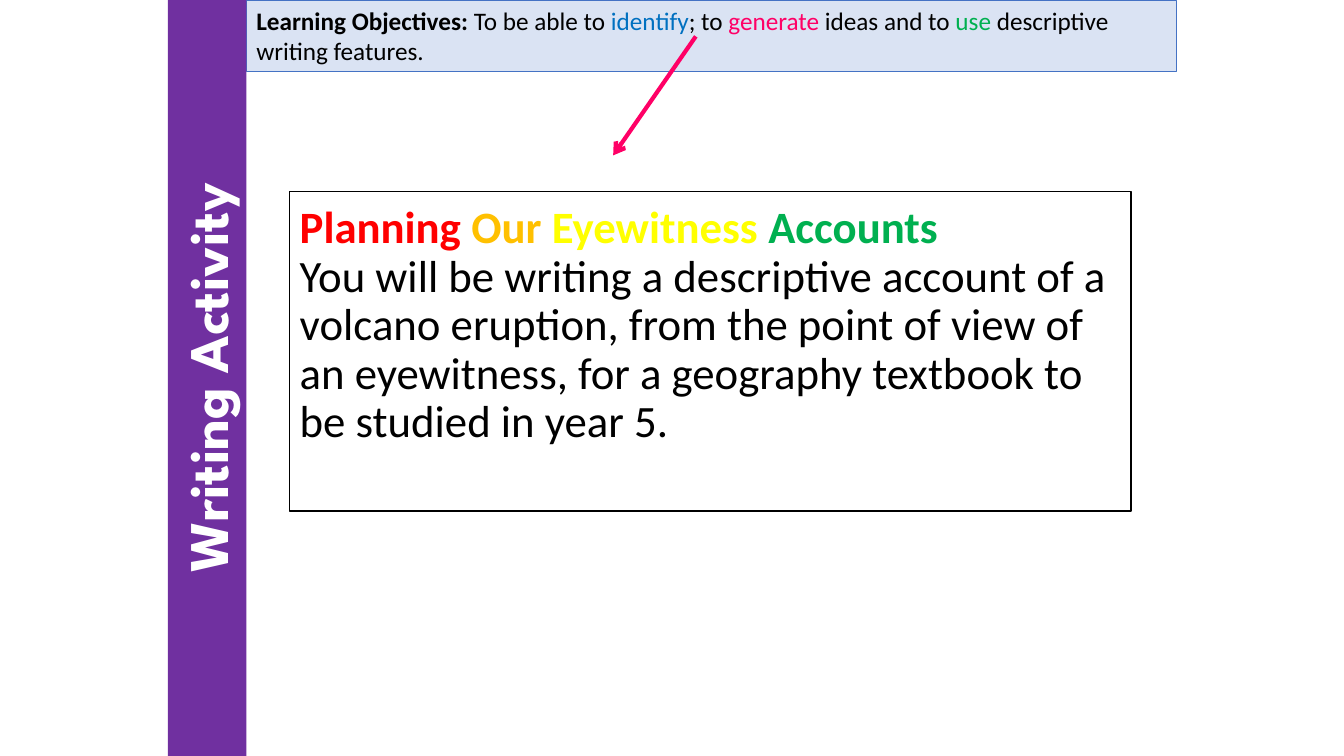
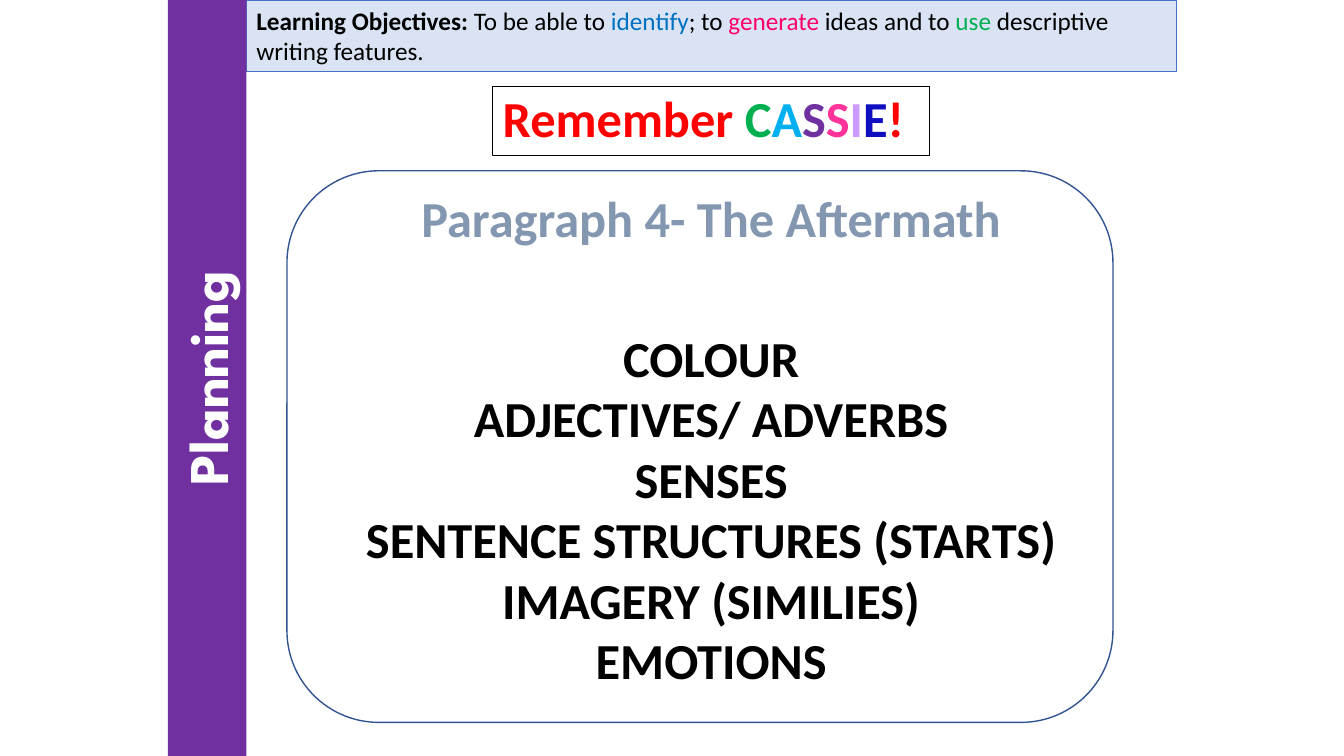
"""Build two lesson slides on planning a descriptive eyewitness account."""
from dataclasses import dataclass
from typing import NamedTuple, Optional

from lxml import etree
from pptx import Presentation
from pptx import util as u
from pptx.dml.color import RGBColor
from pptx.enum import shapes, text
from pptx.oxml import ns


@dataclass(frozen=True)
class Theme:
    body_font: str = "Calibri"
    banner_font: str = "League Spartan"
    objective_size: int = 18
    body_size: int = 32
    heading_size: int = 36
    banner_size: int = 40
    black: str = "000000"
    white: str = "FFFFFF"
    purple: str = "7030A0"
    pale_blue: str = "DAE3F3"
    objective_line: str = "4472C4"
    panel_line: str = "325491"
    slate: str = "8497B0"
    blue: str = "0070C0"
    pink: str = "FF0066"
    green: str = "00B050"
    red: str = "FF0000"
    amber: str = "FFC000"
    yellow: str = "FFFF00"
    sky: str = "00B0F0"
    rose: str = "FF3399"
    lilac: str = "CC99FF"
    navy: str = "0F0FC1"


THEME = Theme()
SLIDE_WIDTH, SLIDE_HEIGHT = 960, 540


class Box(NamedTuple):
    left: float
    top: float
    width: float
    height: float


class Span(NamedTuple):
    words: str
    color: Optional[str] = None
    bold: Optional[bool] = None


@dataclass(frozen=True)
class Line:
    spans: tuple[Span, ...]
    size: int
    color: str = THEME.black
    bold: bool = True
    font: str = THEME.body_font
    align: text.PP_ALIGN = text.PP_ALIGN.LEFT
    spacing: float = 1.0


@dataclass(frozen=True)
class Panel:
    box: Box
    lines: tuple[Line, ...] = ()
    fill: Optional[str] = None
    outline: Optional[str] = None
    outline_width: float = 1
    preset: shapes.MSO_SHAPE = shapes.MSO_SHAPE.RECTANGLE
    rotation: float = 0
    anchor: text.MSO_ANCHOR = text.MSO_ANCHOR.TOP
    top_inset: float = 3.6


OBJECTIVES = Panel(
    Box(176, 0, 664, 51),
    (Line((
        Span("Learning Objectives: ", bold=True),
        Span("To be able to "),
        Span("identify", THEME.blue),
        Span("; to "),
        Span("generate ", THEME.pink),
        Span("ideas and to "),
        Span("use ", THEME.green),
        Span("descriptive writing features."),
    ), THEME.objective_size, bold=False),),
    THEME.pale_blue, THEME.objective_line, 0.5,
)


def centred(words: str, size: int, color: str = THEME.black, font: str = THEME.body_font) -> Line:
    return Line((Span(words),), size, color, font=font, align=text.PP_ALIGN.CENTER)


def write_line(paragraph, line: Line) -> None:
    paragraph.alignment = line.align
    paragraph.line_spacing = line.spacing
    font = paragraph.font
    font.name, font.size, font.bold = line.font, u.Pt(line.size), line.bold
    font.color.rgb = RGBColor.from_string(line.color)
    for span in line.spans:
        run = paragraph.add_run()
        run.text = span.words
        if span.color:
            run.font.color.rgb = RGBColor.from_string(span.color)
        if span.bold is not None:
            run.font.bold = span.bold


def draw_panel(slide, panel: Panel) -> None:
    shape = slide.shapes.add_shape(panel.preset, *map(u.Pt, panel.box))
    shape.shadow.inherit = False
    shape.rotation = panel.rotation
    if panel.fill:
        shape.fill.solid()
        shape.fill.fore_color.rgb = RGBColor.from_string(panel.fill)
    else:
        shape.fill.background()
    if panel.outline:
        shape.line.color.rgb = RGBColor.from_string(panel.outline)
        shape.line.width = u.Pt(panel.outline_width)
    else:
        shape.line.fill.background()
    frame = shape.text_frame
    frame.word_wrap = True
    frame.vertical_anchor = panel.anchor
    frame.margin_top = u.Pt(panel.top_inset)
    for index, line in enumerate(panel.lines):
        write_line(frame.add_paragraph() if index else frame.paragraphs[0], line)


def draw_banner(slide, words: str) -> None:
    centre, thickness = 148, 56
    box = Box(centre - SLIDE_HEIGHT / 2, (SLIDE_HEIGHT - thickness) / 2, SLIDE_HEIGHT, thickness)
    line = centred(words, THEME.banner_size, THEME.white, THEME.banner_font)
    draw_panel(slide, Panel(box, (line,), THEME.purple, rotation=270))


def draw_arrow(slide, start: tuple[float, float], end: tuple[float, float]) -> None:
    arrow = slide.shapes.add_connector(
        shapes.MSO_CONNECTOR.STRAIGHT, *map(u.Pt, (*start, *end)))
    arrow.line.color.rgb = RGBColor.from_string(THEME.pink)
    arrow.line.width = u.Pt(3)
    etree.SubElement(arrow.line._get_or_add_ln(), ns.qn("a:tailEnd"), type="arrow")
    etree.SubElement(arrow._element.spPr, ns.qn("a:effectLst"))


def add_lesson_slide(presentation, banner: str, panels: tuple[Panel, ...]):
    slide = presentation.slides.add_slide(presentation.slide_layouts[6])
    for panel in (*panels, OBJECTIVES):
        draw_panel(slide, panel)
    draw_banner(slide, banner)
    return slide


def add_activity(presentation) -> None:
    heading = (Span("Planning ", THEME.red), Span("Our ", THEME.amber),
               Span("Eyewitness ", THEME.yellow), Span("Accounts", THEME.green))
    task = Span("You will be writing a descriptive account of a volcano eruption, from the "
                "point of view of an eyewitness, for a geography textbook to be studied in year 5.")
    brief = Panel(
        Box(207, 137, 601, 228),
        (Line(heading, THEME.body_size, spacing=0.9),
         Line((task,), THEME.body_size, bold=False, spacing=0.9)),
        THEME.white, THEME.black, top_inset=9.5,
    )
    slide = add_lesson_slide(presentation, "Writing Activity", (brief,))
    draw_arrow(slide, (497, 26), (438, 111))


def add_planning(presentation) -> None:
    letter_colors = (THEME.green, THEME.sky, THEME.purple, THEME.rose, THEME.lilac, THEME.navy)
    letters = tuple(Span(letter, color) for letter, color in zip("CASSIE", letter_colors))
    reminder = Line((Span("Remember "), *letters, Span("!")),
                    THEME.heading_size, THEME.red, spacing=0.9)
    features = ("COLOUR", "ADJECTIVES/ ADVERBS", "SENSES", "SENTENCE STRUCTURES (STARTS)",
                "IMAGERY (SIMILIES)", "EMOTIONS")
    add_lesson_slide(presentation, "Planning", (
        Panel(Box(352, 62, 312, 49), (reminder,), THEME.white, THEME.black,
              anchor=text.MSO_ANCHOR.MIDDLE),
        Panel(Box(205, 122, 590, 394), fill=THEME.white, outline=THEME.panel_line,
              preset=shapes.MSO_SHAPE.ROUNDED_RECTANGLE),
        Panel(Box(221, 130, 574, 51),
              (centred("Paragraph 4- The Aftermath", THEME.heading_size, THEME.slate),)),
        Panel(Box(237, 230, 542, 269),
              tuple(centred(feature, THEME.heading_size) for feature in features)),
    ))


def main() -> None:
    presentation = Presentation()
    presentation.slide_width, presentation.slide_height = u.Pt(SLIDE_WIDTH), u.Pt(SLIDE_HEIGHT)
    add_activity(presentation)
    add_planning(presentation)
    presentation.save("out.pptx")


if __name__ == "__main__":
    main()
